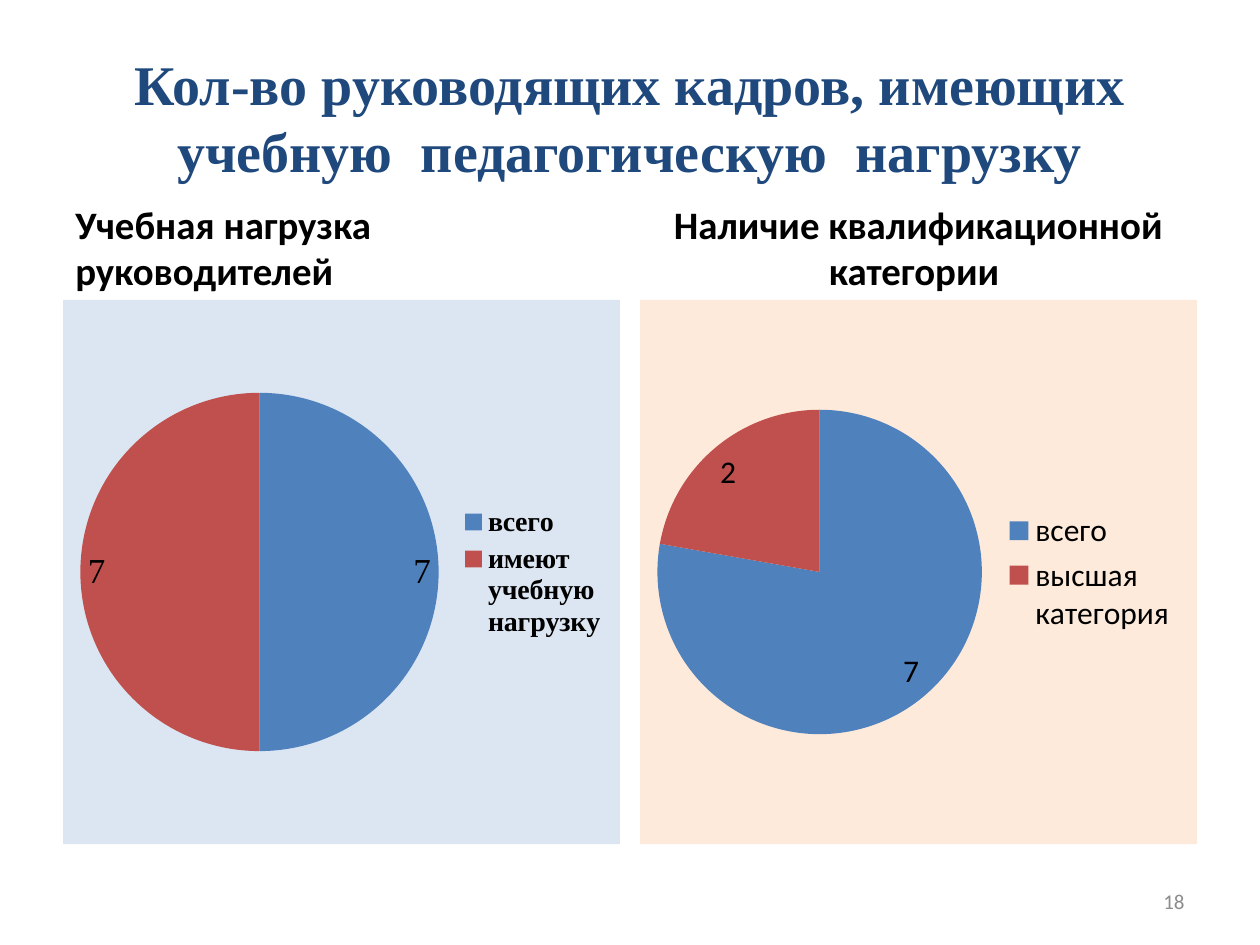
from pptx import Presentation
from pptx.chart.data import CategoryChartData
from pptx.dml.color import RGBColor
from pptx.enum.chart import XL_CHART_TYPE, XL_LABEL_POSITION, XL_LEGEND_POSITION
from pptx.enum.text import MSO_ANCHOR, PP_ALIGN
from pptx.oxml import parse_xml
from pptx.oxml.ns import nsdecls, qn
from pptx.util import Inches, Pt

PIE = XL_CHART_TYPE.PIE
INSIDE_END = XL_LABEL_POSITION.INSIDE_END
LEGEND_RIGHT = XL_LEGEND_POSITION.RIGHT
MIDDLE, BOTTOM = MSO_ANCHOR.MIDDLE, MSO_ANCHOR.BOTTOM
LEFT, CENTER, RIGHT = PP_ALIGN.LEFT, PP_ALIGN.CENTER, PP_ALIGN.RIGHT

SERIF, SANS = "Times New Roman", "Calibri"
THEME = {
    "slices": ("4F81BD", "C0504D"),
    "title": {"name": SERIF, "size": 32, "bold": True, "color": "1F497D"},
    "heading": {"name": SANS, "size": 22.2, "bold": True, "color": "000000"},
    "number": {"name": SANS, "size": 12, "bold": False, "color": "8C8C8C"},
    "serif legend": {"name": SERIF, "size": 16, "bold": True, "color": "000000"},
    "serif label": {"name": SERIF, "size": 20, "bold": False, "color": "000000"},
    "sans chart": {"name": SANS, "size": 18, "bold": False, "color": "000000"},
}

WIDTH, HEIGHT = 10, 7.5
MARGIN = 0.05 * WIDTH
COLUMN_WIDTH, COLUMN_GAP = 4.42, 0.16
HEADING_TOP, HEADING_HEIGHT = 1.68, 0.7
CHART_TOP, CHART_HEIGHT = HEADING_TOP + HEADING_HEIGHT, 4.32


def style_font(font, style):
    formats = {**THEME[style], "size": Pt(THEME[style]["size"])}
    font.color.rgb = RGBColor.from_string(formats.pop("color"))
    for attribute, value in formats.items():
        setattr(font, attribute, value)


def add_text(box, text, style, align, anchor):
    """Place styled text in a box given as left, top, width, height in inches."""
    frame = slide.shapes.add_textbox(*map(Inches, box)).text_frame
    frame.word_wrap = True
    frame.vertical_anchor = anchor
    paragraph = frame.paragraphs[0]
    paragraph.alignment = align
    run = paragraph.add_run()
    run.text = text
    style_font(run.font, style)


presentation = Presentation()
presentation.slide_width, presentation.slide_height = Inches(WIDTH), Inches(HEIGHT)
slide = presentation.slides.add_slide(presentation.slide_layouts[6])

add_text((MARGIN, 0.04 * HEIGHT, WIDTH - 2 * MARGIN, 1.25),
         "Кол-во руководящих кадров, имеющих учебную  педагогическую  нагрузку",
         "title", CENTER, MIDDLE)

columns = [
    {"heading": "Учебная нагрузка руководителей", "align": LEFT,
     "categories": ("всего", "имеют учебную нагрузку"), "values": (7, 7),
     "panel": "DCE6F2", "legend": "serif legend", "label": "serif label"},
    {"heading": "Наличие квалификационной категории ", "align": CENTER,
     "categories": ("всего ", "высшая категория "), "values": (7, 2),
     "panel": "FDEADA", "legend": "sans chart", "label": "sans chart"},
]

for index, column in enumerate(columns):
    left = MARGIN + index * (COLUMN_WIDTH + COLUMN_GAP)
    add_text((left, HEADING_TOP, COLUMN_WIDTH, HEADING_HEIGHT),
             column["heading"], "heading", column["align"], BOTTOM)

    staff = CategoryChartData()
    staff.categories = column["categories"]
    staff.add_series("Series 1", column["values"])
    chart = slide.shapes.add_chart(
        PIE, *map(Inches, (left, CHART_TOP, COLUMN_WIDTH, CHART_HEIGHT)), staff).chart
    style_font(chart.font, column["label"])
    chart.has_title = False
    chart.has_legend = True
    chart.legend.position = LEGEND_RIGHT
    chart.legend.include_in_layout = False
    style_font(chart.legend.font, column["legend"])

    plot = chart.plots[0]
    plot.vary_by_categories = True
    plot.has_data_labels = True
    labels = plot.data_labels
    labels.show_value = True
    labels.show_percentage = False
    labels.position = INSIDE_END
    style_font(labels.font, column["label"])
    for point_index, color in enumerate(THEME["slices"]):
        fill = plot.series[0].points[point_index].format.fill
        fill.solid()
        fill.fore_color.rgb = RGBColor.from_string(color)

    chart.element.find(qn("c:chart")).addnext(parse_xml(
        f'<c:spPr {nsdecls("c", "a")}><a:solidFill><a:srgbClr val="{column["panel"]}"/>'
        '</a:solidFill><a:ln><a:noFill/></a:ln></c:spPr>'))

add_text((WIDTH - MARGIN - 2.33, 6.95, 2.33, 0.4), "18", "number", RIGHT, MIDDLE)

presentation.save("out.pptx")
